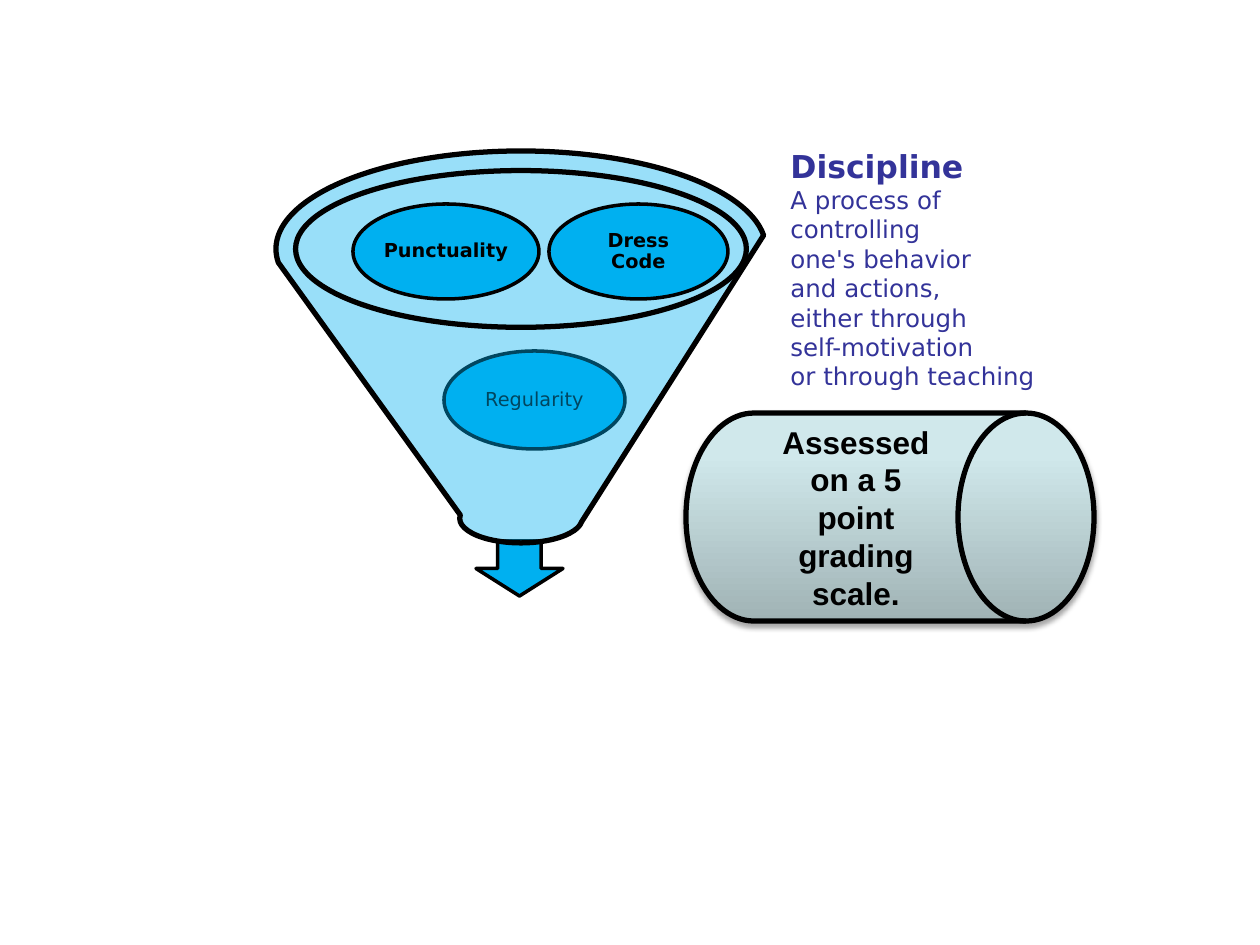
from copy import deepcopy

from lxml import etree
from pptx import Presentation
from pptx.dml.color import RGBColor
from pptx.enum.shapes import MSO_SHAPE as Shape
from pptx.enum.text import MSO_ANCHOR as Anchor, MSO_AUTO_SIZE as AutoSize, PP_ALIGN as Align
from pptx.oxml.ns import qn
from pptx.util import Emu, Pt

PX = 914400 / 126
BLUE = RGBColor(0x00, 0xB0, 0xF0)
BLACK = RGBColor(0x00, 0x00, 0x00)
INDIGO = RGBColor(0x33, 0x33, 0x99)
DRUM_STOPS = [
    (0.0, RGBColor(0xA0, 0xB3, 0xB5)),
    (0.8, RGBColor(0xD0, 0xE8, 0xEB)),
    (1.0, RGBColor(0xD1, 0xEA, 0xEC)),
]
LABEL_FONT = "DejaVu Sans"
DRUM_FONT = "Arial"

DEFINITION = [
    "A process of",
    "controlling",
    "one's behavior",
    "and actions,",
    "either through",
    "self-motivation",
    "or through teaching",
]
FACTORS = [  # left, top, width, height, label, bold
    (549, 204, 179, 95, "Dress Code", True),
    (353, 204, 186, 95, "Punctuality", True),
    (444, 351, 181, 98, "Regularity", False),
]


def px(*lengths):
    return [Emu(round(length * PX)) for length in lengths]


def set_all(target, values):
    for name, value in values.items():
        setattr(target, name, value)


class Painter:
    def __init__(self, page):
        self.page = page

    def shape(self, kind, area, line=None, opacity=None):
        shape = self.page.shapes.add_shape(kind, *px(*area))
        shape.shadow.inherit = False
        shape.fill.solid()
        shape.fill.fore_color.rgb = BLUE
        if opacity:
            color = shape._element.spPr.find(qn("a:solidFill"))[0]
            etree.SubElement(color, qn("a:alpha"), val=str(opacity * 1000))
        if line:
            shape.line.color.rgb = BLACK
            shape.line.width = Pt(line)
        else:
            shape.line.fill.background()
        return shape

    def fill_para(self, para, text, font, size, bold, color=BLACK):
        para.text = text
        set_all(para.font, {"name": font, "size": Pt(size), "bold": bold})
        para.font.color.rgb = color

    def label(self, shape, text, font, size, bold, spacing=None, inset=None):
        """Centre one paragraph inside a shape."""
        frame = shape.text_frame
        set_all(frame, {"word_wrap": True, "vertical_anchor": Anchor.MIDDLE})
        if inset is not None:
            for side in ("left", "top", "right", "bottom"):
                setattr(frame, f"margin_{side}", px(inset)[0])
        para = frame.paragraphs[0]
        self.fill_para(para, text, font, size, bold)
        set_all(para, {"alignment": Align.CENTER, "line_spacing": spacing})

    def factor(self, left, top, width, height, text, bold):
        oval = self.shape(Shape.OVAL, (left, top, width, height), line=2)
        self.label(oval, text, LABEL_FONT, 11, bold, spacing=0.9, inset=2)

    def drum(self, area, text):
        drum = self.shape(Shape.FLOWCHART_DIRECT_ACCESS_STORAGE, area, line=3)
        drum.fill.gradient()
        drum.fill.gradient_angle = 90
        stop_list = drum._element.spPr.find(qn("a:gradFill")).find(qn("a:gsLst"))
        stop_list.append(deepcopy(stop_list[-1]))
        for stop, (position, color) in zip(drum.fill.gradient_stops, DRUM_STOPS):
            stop.position = position
            stop.color.rgb = color
        self.soft_shadow(drum)
        self.label(drum, text, DRUM_FONT, 18, True)

    def soft_shadow(self, shape):
        effects = shape._element.spPr.find(qn("a:effectLst"))
        shadow = etree.SubElement(
            effects, qn("a:outerShdw"), blurRad=str(int(Pt(3.1))),
            dist=str(int(Pt(1.8))), dir="5400000", rotWithShape="0")
        color = etree.SubElement(shadow, qn("a:srgbClr"), val=str(BLACK))
        etree.SubElement(color, qn("a:alpha"), val="35000")

    def definition(self, area, title, lines):
        frame = self.page.shapes.add_textbox(*px(*area)).text_frame
        set_all(frame, {"word_wrap": True, "auto_size": AutoSize.SHAPE_TO_FIT_TEXT})
        self.fill_para(frame.paragraphs[0], title, LABEL_FONT, 18, True, INDIGO)
        for line in lines:
            self.fill_para(frame.add_paragraph(), line, LABEL_FONT, 14, False, INDIGO)


def main():
    deck = Presentation()
    deck.slide_width, deck.slide_height = px(1260, 945)
    painter = Painter(deck.slides.add_slide(deck.slide_layouts[6]))

    painter.shape(Shape.OVAL, (297, 172, 451, 156), opacity=40)
    painter.shape(Shape.DOWN_ARROW, (476, 541, 87, 55), line=2)
    for factor in FACTORS:
        painter.factor(*factor)
    painter.shape(Shape.FUNNEL, (276, 151, 490, 392), line=3, opacity=40)
    painter.drum((686, 413, 408, 208), "Assessed on a 5\vpoint grading scale.")
    painter.definition((778, 141, 358, 258), "Discipline", DEFINITION)

    deck.save("out.pptx")


if __name__ == "__main__":
    main()
